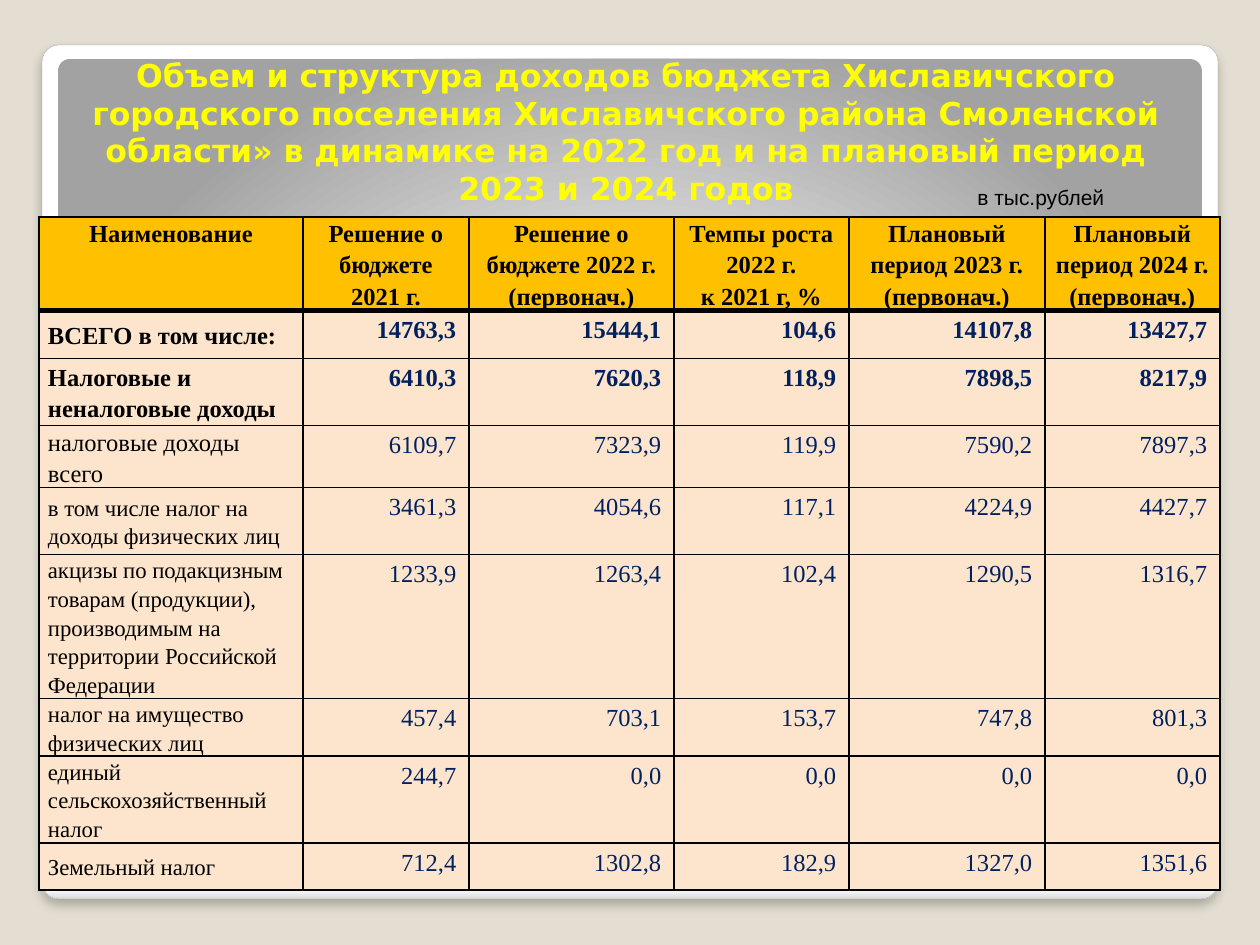
from lxml.etree import SubElement
from pptx import Presentation
from pptx.dml.color import RGBColor
from pptx.enum.shapes import MSO_SHAPE
from pptx.enum.text import MSO_ANCHOR, MSO_AUTO_SIZE, PP_ALIGN
from pptx.oxml.ns import qn
from pptx.util import Pt

SCALE = 914400 / 126
TITLE = ("Объем и структура доходов бюджета Хиславичского городского поселения "
         "Хиславичского района Смоленской области» в динамике на 2022 год "
         "и на плановый период 2023 и 2024 годов")
UNIT = "в тыс.рублей"
HEAD = ["Наименование", "Решение о бюджете\v2021 г.",
        "Решение о бюджете 2022 г.\n(первонач.)",
        "Темпы роста\n2022 г.\nк 2021 г, %",
        "Плановый период 2023 г.\n(первонач.)",
        "Плановый период 2024 г.\n(первонач.)"]
BODY = [
    ("ВСЕГО в том числе:", "14763,3", "15444,1", "104,6", "14107,8", "13427,7"),
    ("Налоговые и неналоговые доходы", "6410,3", "7620,3", "118,9", "7898,5", "8217,9"),
    ("налоговые доходы всего", "6109,7", "7323,9", "119,9", "7590,2", "7897,3"),
    ("в том числе налог на доходы физических лиц",
     "3461,3", "4054,6", "117,1", "4224,9", "4427,7"),
    ("акцизы по подакцизным товарам (продукции), производимым на территории "
     "Российской Федерации", "1233,9", "1263,4", "102,4", "1290,5", "1316,7"),
    ("налог на имущество физических лиц", "457,4", "703,1", "153,7", "747,8", "801,3"),
    ("единый сельскохозяйственный налог", "244,7", "0,0", "0,0", "0,0", "0,0"),
    ("Земельный налог", "712,4", "1302,8", "182,9", "1327,0", "1351,6"),
]
COLS = [264, 166, 205, 175, 196, 175]
ROWS = [93, 48, 67, 62, 67, 144, 57, 87, 47]
BOLD_ROWS = 3
SMALL_FROM = 4


def px(n):
    return round(n * SCALE)


def box(*sides):
    return [px(n) for n in sides]


def color(code):
    return RGBColor.from_string(code)


def node(parent, tag, **attrs):
    return SubElement(parent, qn(tag), {k: str(v) for k, v in attrs.items()})


def style(frame, font, size, code, bold=False, align=PP_ALIGN.LEFT, gap=None):
    for para in frame.paragraphs:
        para.alignment = align
        para.line_spacing = gap
        for run in para.runs:
            run.font.name = font
            run.font.size = Pt(size)
            run.font.bold = bold
            run.font.color.rgb = color(code)


def panel(slide, place, stops):
    shape = slide.shapes.add_shape(MSO_SHAPE.ROUNDED_RECTANGLE, *box(*place))
    shape.adjustments[0] = 0.02
    shape.shadow.inherit = False
    shape.line.fill.background()
    shape.fill.gradient()
    grad = shape._element.spPr.find(qn("a:gradFill"))
    for child in list(grad):
        grad.remove(child)
    items = node(grad, "a:gsLst")
    for pos, code in stops:
        node(node(items, "a:gs", pos=pos * 1000), "a:srgbClr", val=code)
    return shape, grad


def border(cell, top, bottom):
    props = cell._tc.get_or_add_tcPr()
    for index, (side, width) in enumerate(zip("LRTB", (1, 1, top, bottom))):
        line = node(props, f"a:ln{side}", w=Pt(width))
        node(node(line, "a:solidFill"), "a:srgbClr", val="000000")
        props.insert(index, line)


def fill_cell(cell, text, row, col):
    head, label = row == 0, col == 0
    frame = cell.text_frame
    frame.text = text
    cell.fill.solid()
    cell.fill.fore_color.rgb = color("FFC000" if head else "FDE5CD")
    border(cell, 3 if row == 1 else 1, 3 if head else 1)
    if head or label:
        cell.margin_left = cell.margin_right = px(9)
        cell.margin_top = cell.margin_bottom = 0
    if label and not head:
        cell.vertical_anchor = MSO_ANCHOR.MIDDLE
    align = PP_ALIGN.CENTER if head else PP_ALIGN.LEFT if label else PP_ALIGN.RIGHT
    style(frame, "Times New Roman", 13 if label and row >= SMALL_FROM else 14,
          "000000" if head or label else "002060", row < BOLD_ROWS, align,
          1.15 if head or label else None)


def main():
    deck = Presentation()
    deck.slide_width, deck.slide_height = box(1260, 945)
    slide = deck.slides.add_slide(deck.slide_layouts[5])
    slide.background.fill.solid()
    slide.background.fill.fore_color.rgb = color("E3DED1")

    card, grad = panel(slide, (42, 45, 1176, 854),
                       [(0, "FFFFFF"), (98, "FFFFFF"), (99, "F7F7F7"), (100, "DADADA")])
    node(grad, "a:lin", ang=90 * 60000, scaled=0)
    card.line.color.rgb = color("A4A4A4")
    card.line.width = Pt(0.16)
    effects = card._element.spPr.find(qn("a:effectLst"))
    shade = node(effects, "a:outerShdw", blurRad=Pt(6), dist=Pt(4),
                 dir=90 * 60000, algn="t", rotWithShape=0)
    node(node(shade, "a:srgbClr", val="000000"), "a:alpha", val=25000)

    _, grad = panel(slide, (58, 59, 1144, 599),
                    [(0, "FFFFFF"), (55, "E1E1E1"), (100, "A2A2A2")])
    node(node(grad, "a:path", path="circle"), "a:fillToRect",
         l=50000, t=175000, r=50000, b=-75000)

    title = slide.shapes.title
    slide.shapes._spTree.append(title._element)
    title.left, title.top, title.width, title.height = box(59, 39, 1134, 168)
    frame = title.text_frame
    frame.text = TITLE
    frame.word_wrap = True
    frame.auto_size = MSO_AUTO_SIZE.NONE
    frame.vertical_anchor = MSO_ANCHOR.BOTTOM
    frame.margin_bottom = 0
    style(frame, "DejaVu Sans", 18, "FFFF00", True, PP_ALIGN.CENTER)

    table = slide.shapes.add_table(
        len(ROWS), len(COLS), *box(39, 217, sum(COLS), sum(ROWS))).table
    for col, width in zip(table.columns, COLS):
        col.width = px(width)
    for row, height in zip(table.rows, ROWS):
        row.height = px(height)
    for r, texts in enumerate([HEAD, *BODY]):
        for c, text in enumerate(texts):
            fill_cell(table.cell(r, c), text, r, c)

    note = slide.shapes.add_textbox(*box(965, 178, 197, 38)).text_frame
    note.word_wrap = True
    note.text = UNIT
    style(note, "Arial", 12, "000000")
    deck.save("out.pptx")


if __name__ == "__main__":
    main()
